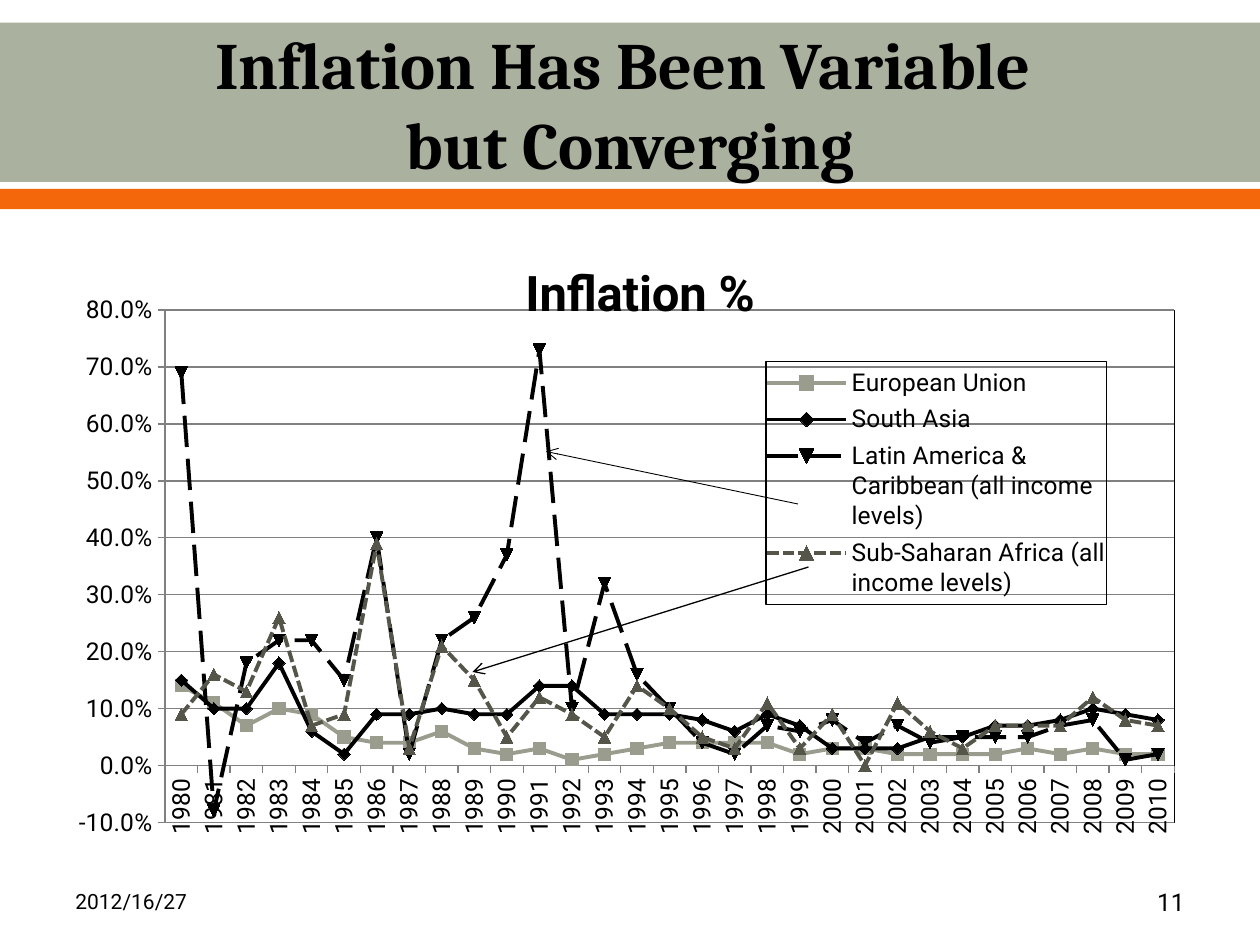
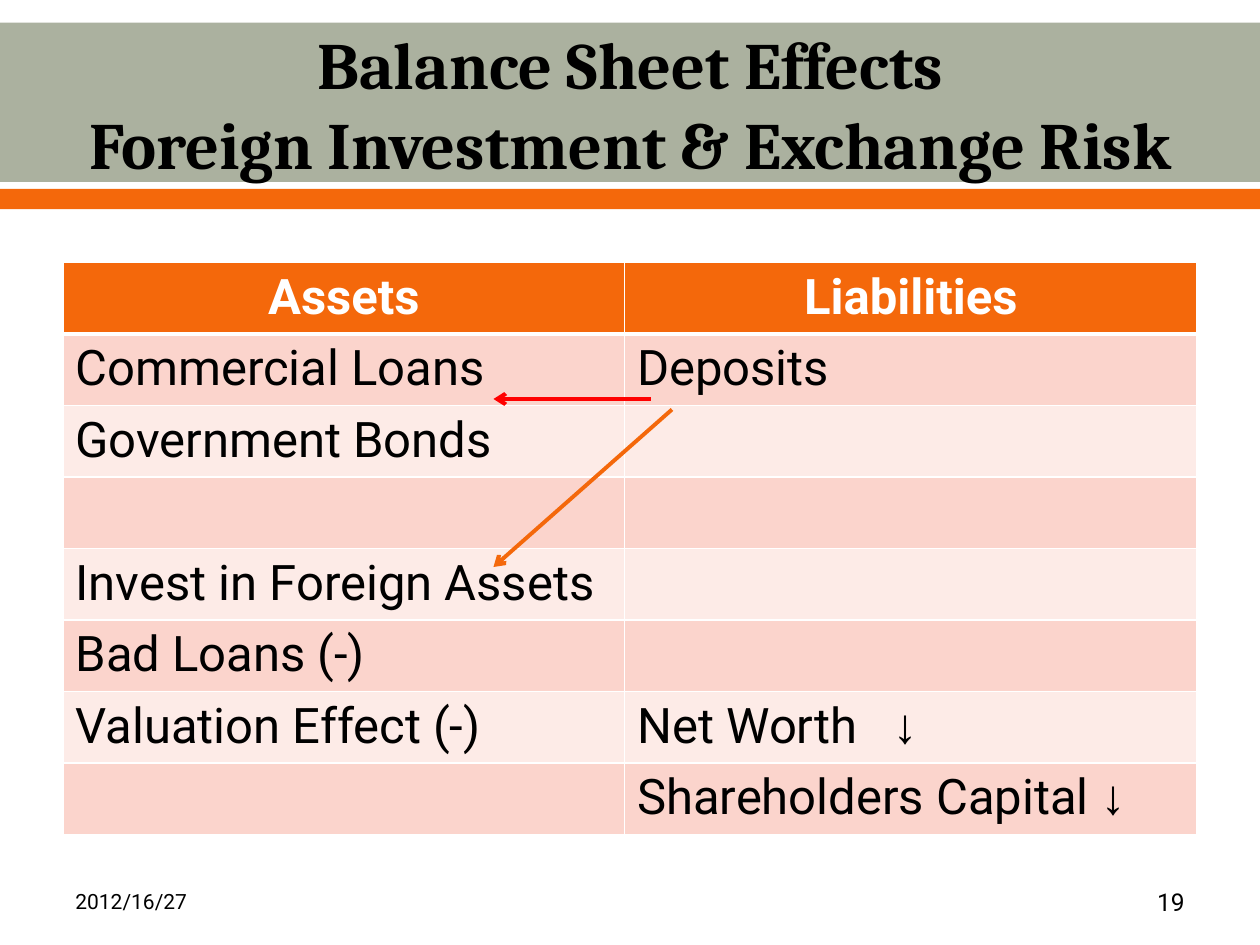
from dataclasses import dataclass

from lxml.etree import SubElement
from pptx import Presentation
from pptx.chart.data import CategoryChartData
from pptx.dml.color import RGBColor
from pptx.enum.chart import (XL_CHART_TYPE, XL_LEGEND_POSITION as LegendPos,
                             XL_MARKER_STYLE as Marker, XL_TICK_MARK as Tick)
from pptx.enum.dml import MSO_LINE as Dash
from pptx.enum.shapes import MSO_CONNECTOR, MSO_SHAPE
from pptx.enum.text import MSO_ANCHOR as Anchor, PP_ALIGN as Align
from pptx.oxml import parse_xml
from pptx.oxml.ns import nsdecls, qn
from pptx.util import Pt


@dataclass(frozen=True)
class Theme:
    # Colours
    sage: str = "ABB19F"
    sage_line: str = "9A9D8D"
    olive: str = "55554A"
    orange: str = "F4680B"
    red: str = "FF0000"
    black: str = "000000"
    white: str = "FFFFFF"
    grid: str = "808080"
    row_tints: tuple = ("FBD4CC", "FDEBE7")
    # Fonts and sizes
    heading: str = "Cambria"
    body: str = "Roboto"
    symbol: str = "Arial"
    title_size: float = 37.8
    large: float = 28
    label: float = 14
    small: float = 12


T = Theme()
rgb = RGBColor.from_string


def style_font(font, size, color=T.black, name=T.body, bold=False):
    font.size, font.name, font.bold = Pt(size), name, bold
    font.color.rgb = rgb(color)


def style_line(line, color, width):
    line.color.rgb = rgb(color)
    line.width = Pt(width)


def outline_xml(color, width):
    return parse_xml(
        f'<c:spPr {nsdecls("c", "a")}><a:noFill/><a:ln w="{Pt(width)}"><a:solidFill>'
        f'<a:srgbClr val="{color}"/></a:solidFill></a:ln></c:spPr>')


def place_chart_part(element, index, inner=False, **fractions):
    """Give a chart part a fixed place, as fractions of the chart."""
    for old in element.findall(qn("c:layout")):
        element.remove(old)
    layout = parse_xml(f'<c:layout {nsdecls("c")}><c:manualLayout/></c:layout>')
    manual = layout[0]
    if inner:
        SubElement(manual, qn("c:layoutTarget")).set("val", "inner")
    for key in ("x", "y"):
        SubElement(manual, qn(f"c:{key}Mode")).set("val", "edge")
    for key, value in fractions.items():
        SubElement(manual, qn(f"c:{key}")).set("val", str(value))
    element.insert(index, layout)


class Deck:
    def __init__(self):
        self.prs = Presentation()
        self.prs.slide_width, self.prs.slide_height = Pt(720), Pt(540)
        self.s = None

    def new_slide(self, title, number, title_left=36):
        self.s = self.prs.slides.add_slide(self.prs.slide_layouts[6])
        self.band(13, 91, T.sage)
        self.band(108, 11.5, T.orange)
        self.text(title, title_left, 15, 720 - 2 * title_left, 88, T.title_size,
                  Align.CENTER, name=T.heading, bold=True)
        self.text("2012/16/27", 36, 500.5, 168, 29, T.small)
        self.text(number, 516, 500.5, 168, 29, T.label, Align.RIGHT)

    def band(self, top, height, color):
        sp = self.s.shapes.add_shape(MSO_SHAPE.RECTANGLE, 0, Pt(top), Pt(720), Pt(height))
        sp.shadow.inherit = False
        sp.fill.solid()
        sp.fill.fore_color.rgb = rgb(color)
        sp.line.fill.background()

    def text(self, text, left, top, width, height, size, align=Align.LEFT, **font):
        tf = self.s.shapes.add_textbox(Pt(left), Pt(top), Pt(width), Pt(height)).text_frame
        tf.word_wrap = True
        tf.vertical_anchor = Anchor.MIDDLE
        tf.margin_top = tf.margin_bottom = 0
        p = tf.paragraphs[0]
        p.text = text
        p.alignment = align
        style_font(p.font, size, **font)

    def arrow(self, start, end, color, width):
        c = self.s.shapes.add_connector(MSO_CONNECTOR.STRAIGHT, *map(Pt, start + end))
        style_line(c.line, color, width)
        SubElement(c.line._get_or_add_ln(), qn("a:tailEnd")).set("type", "arrow")
        SubElement(c._element.spPr, qn("a:effectLst"))

    def line_chart(self, title, categories, series, box):
        data = CategoryChartData(number_format="0.0%")
        data.categories = categories
        for name, values, *_ in series:
            data.add_series(name, values)
        chart = self.s.shapes.add_chart(
            XL_CHART_TYPE.LINE_MARKERS, *map(Pt, box), data).chart
        style_font(chart.font, T.label)
        self.chart_frame(chart, title)
        self.chart_axes(chart)
        plot = chart.plots[0]
        plot.vary_by_categories = False
        for line, (_, _, color, dash, marker, size) in zip(plot.series, series):
            line.smooth = False
            style_line(line.format.line, color, 2.25)
            line.format.line.dash_style = dash
            line.marker.style, line.marker.size = marker, size
            line.marker.format.fill.solid()
            line.marker.format.fill.fore_color.rgb = rgb(color)
            style_line(line.marker.format.line, color, 0.75)

    def chart_frame(self, chart, title):
        # Title
        chart.has_title = True
        p = chart.chart_title.text_frame.paragraphs[0]
        p.text = title
        style_font(p.font, T.large, bold=True)
        place_chart_part(chart.chart_title._element, 1, x=0.4, y=0.05)
        # Legend
        chart.has_legend = True
        legend = chart.legend
        legend.position = LegendPos.RIGHT
        legend.include_in_layout = True
        place_chart_part(legend._element, 1, x=0.62, y=0.22, w=0.3, h=0.38)
        legend._element.append(outline_xml(T.black, 0.75))
        style_font(legend.font, T.label)
        # Plot area
        area = chart._chartSpace.chart.plotArea
        place_chart_part(area, 0, inner=True, x=0.09, y=0.14, w=0.89, h=0.8)
        area.append(outline_xml(T.black, 0.75))

    def chart_axes(self, chart):
        for axis in (chart.category_axis, chart.value_axis):
            axis.major_tick_mark, axis.minor_tick_mark = Tick.OUTSIDE, Tick.NONE
            style_line(axis.format.line, T.grid, 0.75)
            style_font(axis.tick_labels.font, T.label)
        years = chart.category_axis
        years._element.find(qn("c:txPr")).find(qn("a:bodyPr")).set("rot", "-5400000")
        rates = chart.value_axis
        rates.minimum_scale, rates.maximum_scale, rates.major_unit = -0.1, 0.8, 0.1
        rates.tick_labels.number_format = "0.0%"
        rates.tick_labels.number_format_is_linked = False
        style_line(rates.major_gridlines.format.line, T.grid, 0.75)

    def table(self, rows, left, top, widths, row_height):
        table = self.s.shapes.add_table(
            len(rows), len(widths), Pt(left), Pt(top),
            Pt(sum(widths)), Pt(row_height * len(rows))).table
        for column, width in zip(table.columns, widths):
            column.width = Pt(width)
        for i, row in enumerate(rows):
            table.rows[i].height = Pt(row_height)
            for j, text in enumerate(row):
                self.cell(table.cell(i, j), text, i)

    def cell(self, cell, text, row):
        header = row == 0
        p = cell.text_frame.paragraphs[0]
        p.alignment = Align.CENTER if header else Align.LEFT
        if "\t" in text:
            tabs = SubElement(p._p.get_or_add_pPr(), qn("a:tabLst"))
            tab = SubElement(tabs, qn("a:tab"))
            tab.set("pos", str(Pt(146)))
            tab.set("algn", "l")
        style_font(p.font, T.large, T.white if header else T.black, bold=header)
        words, arrow, _ = text.partition("↓")
        if words:
            p.add_run().text = words
        if arrow:
            r = p.add_run()
            r.text = arrow
            r.font.name, r.font.bold = T.symbol, True
        # Borders come before the fill
        tcPr = cell._tc.get_or_add_tcPr()
        for side in "LRTB":
            thick = (header and side == "B") or (row == 1 and side == "T")
            tcPr.append(parse_xml(
                f'<a:ln{side} {nsdecls("a")} w="{Pt(3 if thick else 1)}"><a:solidFill>'
                f'<a:srgbClr val="{T.white}"/></a:solidFill></a:ln{side}>'))
        cell.fill.solid()
        cell.fill.fore_color.rgb = rgb(T.orange if header else T.row_tints[(row - 1) % 2])


YEARS = [str(year) for year in range(1980, 2011)]

# Name, percentages, colour, dash, marker, marker size
INFLATION = [
    ("European Union",
     [14, 11, 7, 10, 9, 5, 4, 4, 6, 3, 2, 3, 1, 2, 3, 4,
      4, 4, 4, 2, 3, 3, 2, 2, 2, 2, 3, 2, 3, 2, 2],
     T.sage_line, Dash.SOLID, Marker.SQUARE, 7),
    ("South Asia",
     [15, 10, 10, 18, 6, 2, 9, 9, 10, 9, 9, 14, 14, 9, 9, 9,
      8, 6, 9, 7, 3, 3, 3, 5, 5, 7, 7, 8, 10, 9, 8],
     T.black, Dash.SOLID, Marker.DIAMOND, 7),
    ("Latin America & Caribbean (all income levels)",
     [69, -8, 18, 22, 22, 15, 40, 2, 22, 26, 37, 73, 10, 32, 16, 10,
      4, 2, 7, 6, 8, 4, 7, 4, 5, 5, 5, 7, 8, 1, 2],
     T.black, Dash.LONG_DASH, Marker.AUTOMATIC, 7),
    ("Sub-Saharan Africa (all income levels)",
     [9, 16, 13, 26, 7, 9, 39, 3, 21, 15, 5, 12, 9, 5, 14, 10,
      5, 3, 11, 3, 9, 0, 11, 6, 3, 7, 7, 7, 12, 8, 7],
     T.olive, Dash.SQUARE_DOT, Marker.TRIANGLE, 7),
]

BALANCE_SHEET = [
    ("Assets", "Liabilities"),
    ("Commercial Loans", "Deposits"),
    ("Government Bonds", ""),
    ("", ""),
    ("Invest in Foreign Assets", ""),
    ("Bad Loans (-)", ""),
    ("Valuation Effect (-)", "Net Worth\t↓"),
    ("", "Shareholders Capital ↓"),
]


def main():
    deck = Deck()

    # Inflation chart
    deck.new_slide("Inflation Has Been Variable \vbut Converging", "11")
    series = [(name, [v / 100 for v in values], *look)
              for name, values, *look in INFLATION]
    deck.line_chart("Inflation %", YEARS, series, (36, 126, 648, 366))
    deck.arrow((456, 288), (312, 258), T.black, 0.5)
    deck.arrow((462, 324), (270, 384), T.black, 0.75)

    # Balance sheet
    deck.new_slide("Balance Sheet Effects\vForeign Investment & Exchange Risk", "19",
                   title_left=12)
    deck.table(BALANCE_SHEET, 36, 150, (321, 327), 40)
    deck.arrow((384, 234), (282, 324), T.orange, 2.25)
    deck.arrow((372, 228), (282, 228), T.red, 2.25)

    deck.prs.save("out.pptx")


if __name__ == "__main__":
    main()
